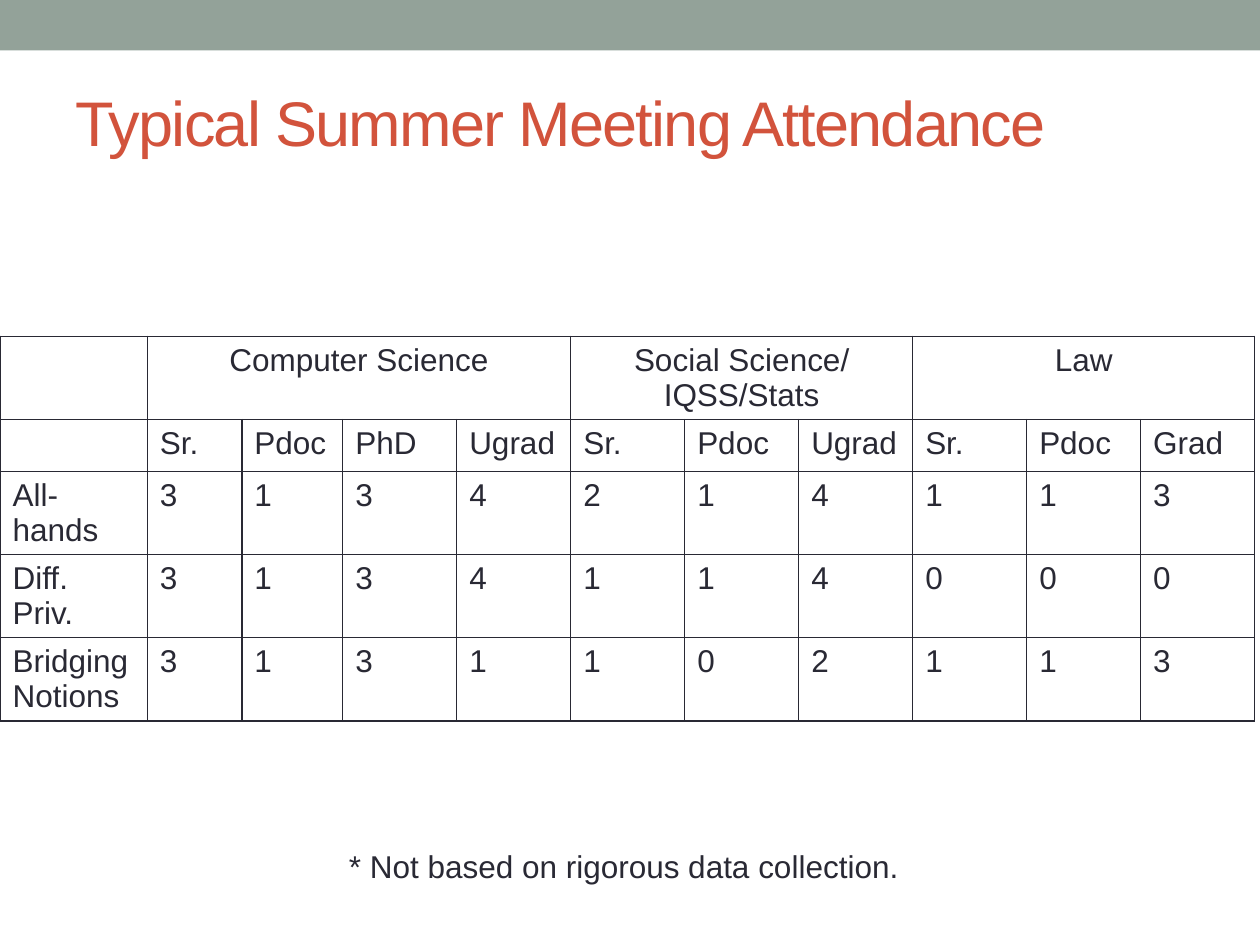
from lxml import etree
from pptx import Presentation
from pptx.dml.color import RGBColor
from pptx.enum.shapes import MSO_SHAPE
from pptx.enum.text import MSO_ANCHOR, MSO_AUTO_SIZE, PP_ALIGN
from pptx.oxml import parse_xml
from pptx.oxml.ns import nsdecls, qn
from pptx.util import Inches, Pt

RECTANGLE = MSO_SHAPE.RECTANGLE
MIDDLE = MSO_ANCHOR.MIDDLE
NO_FIT, GROW = MSO_AUTO_SIZE.NONE, MSO_AUTO_SIZE.SHAPE_TO_FIT_TEXT
LEFT, CENTER = PP_ALIGN.LEFT, PP_ALIGN.CENTER
SAGE = RGBColor(0x93, 0xA2, 0x99)
RED = RGBColor(0xD2, 0x53, 0x3C)
INK = RGBColor(0x29, 0x29, 0x34)


def write(frame, text, size=18, color=INK, align=LEFT):
    para = frame.paragraphs[0]
    para.alignment = align
    for number, line in enumerate(text.split("\n")):
        if number:
            para.add_line_break()
        span = para.add_run()
        span.text = line
        span.font.name = "Arial"
        span.font.size = Pt(size)
        span.font.color.rgb = color
    return span


def add_borders(cell):
    properties = cell._tc.get_or_add_tcPr()
    for position, side in enumerate(("lnL", "lnR", "lnT", "lnB")):
        border = parse_xml(f'<a:{side} {nsdecls("a")} w="{Pt(1)}"/>')
        fill = etree.SubElement(border, qn("a:solidFill"))
        etree.SubElement(fill, qn("a:srgbClr"), val=str(INK))
        properties.insert(position, border)


deck = Presentation()
deck.slide_width, deck.slide_height = Inches(10), Inches(7.5)
page = deck.slides.add_slide(deck.slide_layouts[5])

bar = page.shapes.add_shape(RECTANGLE, 0, 0, Inches(10), Inches(0.4))
bar.shadow.inherit = False
bar.fill.solid()
bar.fill.fore_color.rgb = SAGE
bar.line.fill.background()

title = page.shapes.title
title.left, title.top = Inches(0.5), Inches(0.42)
title.width, title.height = Inches(9), Inches(1.08)
title.text_frame.auto_size = NO_FIT
title.text_frame.vertical_anchor = MIDDLE
heading = write(title.text_frame, "Typical Summer Meeting Attendance", 36, RED)
heading.font._element.set("spc", "-100")

groups = [("Computer Science", 1, 4), ("Social Science/\nIQSS/Stats", 5, 7), ("Law", 8, 10)]
rows = [
    ["", "Sr.", "Pdoc", "PhD", "Ugrad", "Sr.", "Pdoc", "Ugrad", "Sr.", "Pdoc", "Grad"],
    ["All-hands", 3, 1, 3, 4, 2, 1, 4, 1, 1, 3],
    ["Diff.\nPriv.", 3, 1, 3, 4, 1, 1, 4, 0, 0, 0],
    ["Bridging\nNotions", 3, 1, 3, 1, 1, 0, 2, 1, 1, 3],
]
first_widths = [1.17, 0.75, 0.8]
table_width, row_height = 9.96, 0.41
row_count, column_count = len(rows) + 1, len(rows[0])
other_width = (table_width - sum(first_widths)) / (column_count - len(first_widths))
widths = first_widths + [other_width] * (column_count - len(first_widths))

table = page.shapes.add_table(
    row_count, column_count, 0, Inches(2.67), Inches(table_width), Inches(row_height * row_count)
).table
table.first_row = table.horz_banding = False
for column, width in zip(table.columns, widths):
    column.width = Inches(width)
for row in table.rows:
    row.height = Inches(row_height)
for cell in table.iter_cells():
    cell.fill.background()
    add_borders(cell)
for name, first, last in groups:
    table.cell(0, first).merge(table.cell(0, last))
    write(table.cell(0, first).text_frame, name, align=CENTER)
for row_number, values in enumerate(rows, 1):
    for column_number, value in enumerate(values):
        if value != "":
            write(table.cell(row_number, column_number).text_frame, str(value))

footnote = page.shapes.add_textbox(Inches(2.67), Inches(6.67), Inches(4.61), Inches(0.4))
footnote.text_frame.word_wrap = False
footnote.text_frame.auto_size = GROW
write(footnote.text_frame, "* Not based on rigorous data collection.")

deck.save("out.pptx")
